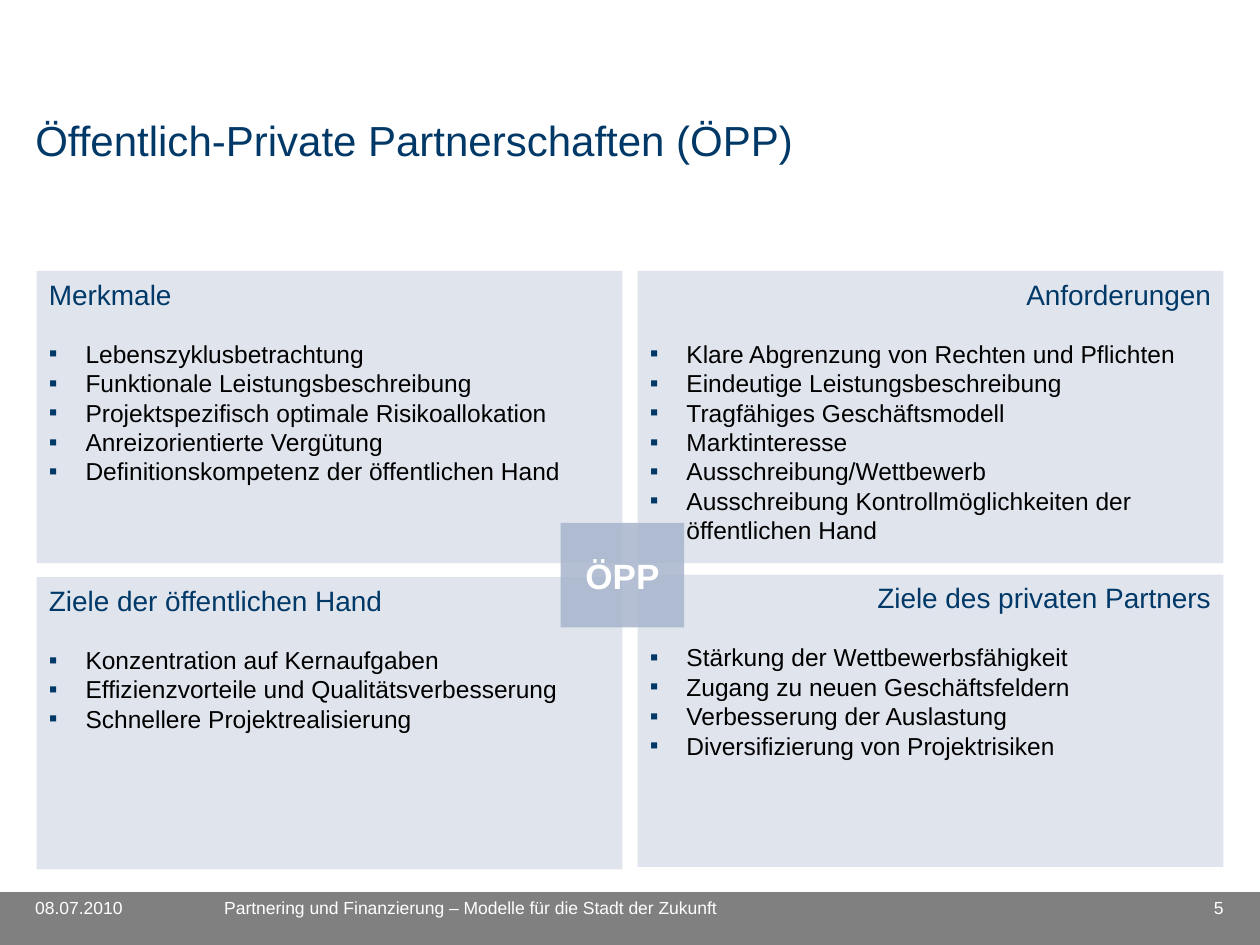
"""Build the slide on public-private partnerships with its four text panels."""
from dataclasses import dataclass

from lxml import etree
from pptx import Presentation
from pptx.dml.color import RGBColor
from pptx.enum import shapes, text
from pptx.oxml import ns
from pptx.util import Inches, Pt

NAVY = RGBColor(0x00, 0x38, 0x67)
BLACK = RGBColor(0x00, 0x00, 0x00)
WHITE = RGBColor(0xFF, 0xFF, 0xFF)
GRAY = RGBColor(0x80, 0x80, 0x80)
PALE = RGBColor(0xE0, 0xE4, 0xED)
STEEL = RGBColor(0xA5, 0xB2, 0xCA)
LEFT, CENTER, RIGHT = (text.PP_ALIGN.LEFT, text.PP_ALIGN.CENTER,
                       text.PP_ALIGN.RIGHT)
PANEL_WIDTH, PANEL_HEIGHT = 4.65, 2.32
INDENT = Inches(0.29)


@dataclass
class Panel:
    left: float
    top: float
    align: text.PP_ALIGN
    heading: str
    points: list[str]


@dataclass
class Label:
    left: float
    top: float
    width: float
    height: float
    wording: str
    size: int
    color: RGBColor
    align: text.PP_ALIGN = LEFT


PANELS = [
    Panel(0.29, 2.15, LEFT, "Merkmale", [
        "Lebenszyklusbetrachtung",
        "Funktionale Leistungsbeschreibung",
        "Projektspezifisch optimale Risikoallokation",
        "Anreizorientierte Vergütung",
        "Definitionskompetenz der öffentlichen Hand",
    ]),
    Panel(5.06, 2.15, RIGHT, "Anforderungen", [
        "Klare Abgrenzung von Rechten und Pflichten",
        "Eindeutige Leistungsbeschreibung",
        "Tragfähiges Geschäftsmodell",
        "Marktinteresse",
        "Ausschreibung/Wettbewerb",
        "Ausschreibung Kontrollmöglichkeiten der öffentlichen Hand",
    ]),
    Panel(0.29, 4.58, LEFT, "Ziele der öffentlichen Hand", [
        "Konzentration auf Kernaufgaben",
        "Effizienzvorteile und Qualitätsverbesserung",
        "Schnellere Projektrealisierung",
    ]),
    Panel(5.06, 4.56, RIGHT, "Ziele des privaten Partners", [
        "Stärkung der Wettbewerbsfähigkeit",
        "Zugang zu neuen Geschäftsfeldern",
        "Verbesserung der Auslastung",
        "Diversifizierung von Projektrisiken",
    ]),
]

LABELS = [
    Label(0.28, 0.91, 9.41, 1.06, "Öffentlich-Private Partnerschaften (ÖPP)",
          24, NAVY),
    Label(8.96, 7.12, 0.75, 0.33, "5", 10, WHITE, RIGHT),
    Label(0.28, 7.12, 1.33, 0.33, "08.07.2010", 10, WHITE),
    Label(1.78, 7.12, 6.97, 0.33,
          "Partnering und Finanzierung – Modelle für die Stadt der Zukunft",
          10, WHITE),
]


def write(para, wording: str, size: int, color: RGBColor,
          align: text.PP_ALIGN = LEFT, bold: bool = False) -> None:
    """Put one formatted span into a paragraph."""
    para.alignment = align
    span = para.add_run()
    span.text = wording
    formats = {"name": "Arial", "size": Pt(size), "bold": bold}
    for name, value in formats.items():
        setattr(span.font, name, value)
    span.font.color.rgb = color


def add_bullet(para) -> None:
    """Give a paragraph a hanging indent and a navy square bullet."""
    properties = para._p.get_or_add_pPr()
    properties.set("marL", str(INDENT))
    properties.set("indent", str(-INDENT))
    color = etree.SubElement(properties, ns.qn("a:buClr"))
    etree.SubElement(color, ns.qn("a:srgbClr"), val=str(NAVY))
    etree.SubElement(properties, ns.qn("a:buFont"), typeface="Arial")
    etree.SubElement(properties, ns.qn("a:buChar"), char="▪")


def add_box(page, left: float, top: float, width: float, height: float,
            fill: RGBColor):
    """Draw a plain filled rectangle without line or shadow."""
    box = page.shapes.add_shape(
        shapes.MSO_SHAPE.RECTANGLE,
        Inches(left), Inches(top), Inches(width), Inches(height))
    box.shadow.inherit = False
    box.fill.solid()
    box.fill.fore_color.rgb = fill
    box.line.fill.background()
    return box


def add_panel(page, panel: Panel) -> None:
    """Draw a panel with its heading and bulleted points."""
    box = add_box(page, panel.left, panel.top, PANEL_WIDTH, PANEL_HEIGHT, PALE)
    frame = box.text_frame
    frame.vertical_anchor = text.MSO_ANCHOR.TOP
    heading = frame.paragraphs[0]
    write(heading, panel.heading, 16, NAVY, panel.align)
    heading.space_after = Pt(16)
    for point in panel.points:
        para = frame.add_paragraph()
        add_bullet(para)
        write(para, point, 14, BLACK)


def add_badge(page) -> None:
    """Draw the translucent square where the panels meet."""
    badge = add_box(page, 4.45, 4.15, 0.98, 0.83, STEEL)
    color = badge.fill._xPr.find(".//" + ns.qn("a:srgbClr"))
    etree.SubElement(color, ns.qn("a:alpha"), val="82000")
    badge.text_frame.vertical_anchor = text.MSO_ANCHOR.MIDDLE
    write(badge.text_frame.paragraphs[0], "ÖPP", 20, WHITE, CENTER, True)


def add_label(page, label: Label) -> None:
    """Place a line of text in a box without margins."""
    box = page.shapes.add_textbox(Inches(label.left), Inches(label.top),
                                  Inches(label.width), Inches(label.height))
    frame = box.text_frame
    frame.word_wrap = True
    for side in ("left", "top", "right", "bottom"):
        setattr(frame, f"margin_{side}", 0)
    write(frame.paragraphs[0], label.wording, label.size, label.color,
          label.align)


def main() -> None:
    """Assemble and save the deck."""
    deck = Presentation()
    deck.slide_width, deck.slide_height = Inches(10), Inches(7.5)
    page = deck.slides.add_slide(deck.slide_layouts[6])
    add_box(page, 0, 7.08, 10, 0.42, GRAY)
    for panel in PANELS:
        add_panel(page, panel)
    add_badge(page)
    for label in LABELS:
        add_label(page, label)
    deck.save("out.pptx")


if __name__ == "__main__":
    main()
